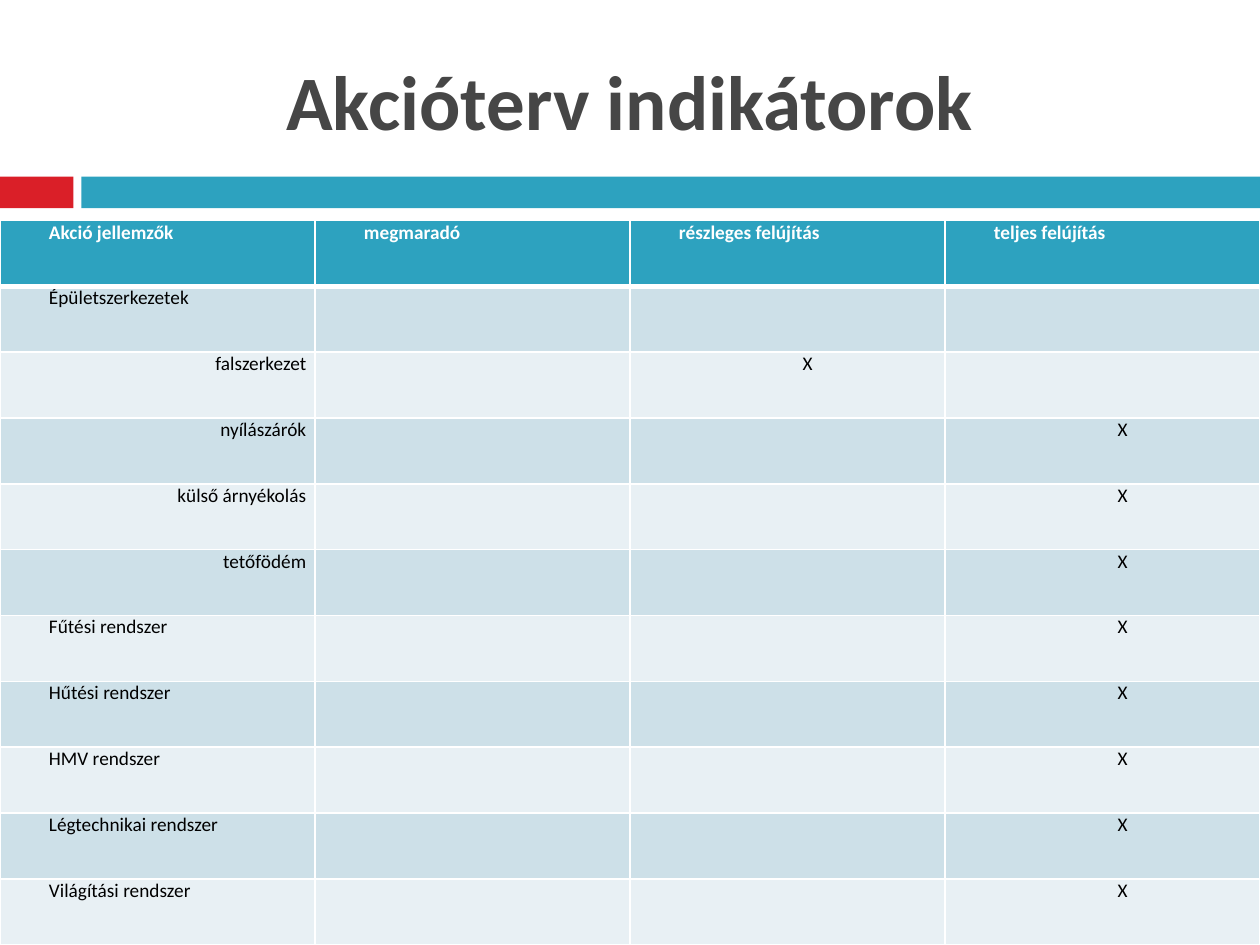
"""Builds the action plan indicator slide with its renovation table."""
from lxml import etree
from pptx import Presentation
from pptx import util as u
from pptx.dml.color import RGBColor
from pptx.enum import shapes, text
from pptx.oxml import ns

FONT = "Calibri"
TITLE = "Akcióterv indikátorok"
HEADINGS = ["Akció jellemzők", "megmaradó", "részleges felújítás", "teljes felújítás"]
LEFT, RIGHT = text.PP_ALIGN.LEFT, text.PP_ALIGN.RIGHT
CENTER, JUSTIFY = text.PP_ALIGN.CENTER, text.PP_ALIGN.JUSTIFY
ACTIONS = [
    ("Épületszerkezetek", JUSTIFY, None),
    ("falszerkezet", RIGHT, 2),
    ("nyílászárók", RIGHT, 3),
    ("külső árnyékolás", RIGHT, 3),
    ("tetőfödém", RIGHT, 3),
    ("Fűtési rendszer", LEFT, 3),
    ("Hűtési rendszer", LEFT, 3),
    ("HMV rendszer", LEFT, 3),
    ("Légtechnikai rendszer", LEFT, 3),
    ("Világítási rendszer", LEFT, 3),
]
RED, TEAL, GREY, WHITE, BLACK = "DA1F28", "2DA2BF", "464646", "FFFFFF", "000000"
BANDS = ["CDE0E8", "E8F0F4"]
WIDTH, HEIGHT = 720, 540
BARS = [(0, 42, RED), (46.5, WIDTH - 46.5, TEAL)]
TABLE_TOP, TABLE_HEIGHT = 126, 414


def color(value):
    return RGBColor.from_string(value)


def add_bar(slide, left, width, fill):
    bar = slide.shapes.add_shape(
        shapes.MSO_SHAPE.RECTANGLE, u.Pt(left), u.Pt(101), u.Pt(width), u.Pt(18))
    bar.shadow.inherit = False
    bar.fill.solid()
    bar.fill.fore_color.rgb = color(fill)
    bar.line.fill.background()


def write(paragraph, words, size, ink, bold, align):
    paragraph.alignment = align
    run = paragraph.add_run()
    run.text = words
    run.font.name = FONT
    run.font.size = u.Pt(size)
    run.font.bold = bold
    run.font.color.rgb = color(ink)


def add_title(slide):
    title = slide.shapes.add_textbox(0, u.Pt(18), u.Pt(WIDTH), u.Pt(78))
    frame = title.text_frame
    frame.word_wrap = True
    frame.vertical_anchor = text.MSO_ANCHOR.MIDDLE
    write(frame.paragraphs[0], TITLE, 44, GREY, True, CENTER)


def add_borders(cell, top, bottom):
    properties = cell._tc.get_or_add_tcPr()
    for side, points in (("L", 1), ("R", 1), ("T", top), ("B", bottom)):
        line = etree.SubElement(properties, ns.qn(f"a:ln{side}"), w=str(u.Pt(points)))
        paint = etree.SubElement(line, ns.qn("a:solidFill"))
        etree.SubElement(paint, ns.qn("a:srgbClr"), val=WHITE)


def fill_cell(cell, words, align, row):
    heading = row == 0
    add_borders(cell, 3 if row == 1 else 1, 3 if heading else 1)
    cell.fill.solid()
    cell.fill.fore_color.rgb = color(TEAL if heading else BANDS[(row - 1) % 2])
    cell.margin_left = cell.margin_right = u.Pt(5)
    cell.margin_top = cell.margin_bottom = 0
    if words:
        paragraph = cell.text_frame.paragraphs[0]
        write(paragraph, words, 11, WHITE if heading else BLACK, heading, align)
        indent = paragraph._p.get_or_add_pPr()
        indent.set("marL", str(u.Pt(23)))
        indent.set("indent", "0")


def add_indicators(slide):
    rows = [[(heading, JUSTIFY) for heading in HEADINGS]]
    for action, align, marked in ACTIONS:
        marks = [("X" if column == marked else "", CENTER)
                 for column in range(1, len(HEADINGS))]
        rows.append([(action, align)] + marks)
    indicators = slide.shapes.add_table(
        len(rows), len(HEADINGS), 0, u.Pt(TABLE_TOP), u.Pt(WIDTH), u.Pt(TABLE_HEIGHT)).table
    for r, row in enumerate(rows):
        indicators.rows[r].height = u.Pt(TABLE_HEIGHT / len(rows))
        for c, (words, align) in enumerate(row):
            fill_cell(indicators.cell(r, c), words, align, r)


def main():
    deck = Presentation()
    deck.slide_width, deck.slide_height = u.Pt(WIDTH), u.Pt(HEIGHT)
    slide = deck.slides.add_slide(deck.slide_layouts[6])
    for bar in BARS:
        add_bar(slide, *bar)
    add_title(slide)
    add_indicators(slide)
    deck.save("out.pptx")


if __name__ == "__main__":
    main()
